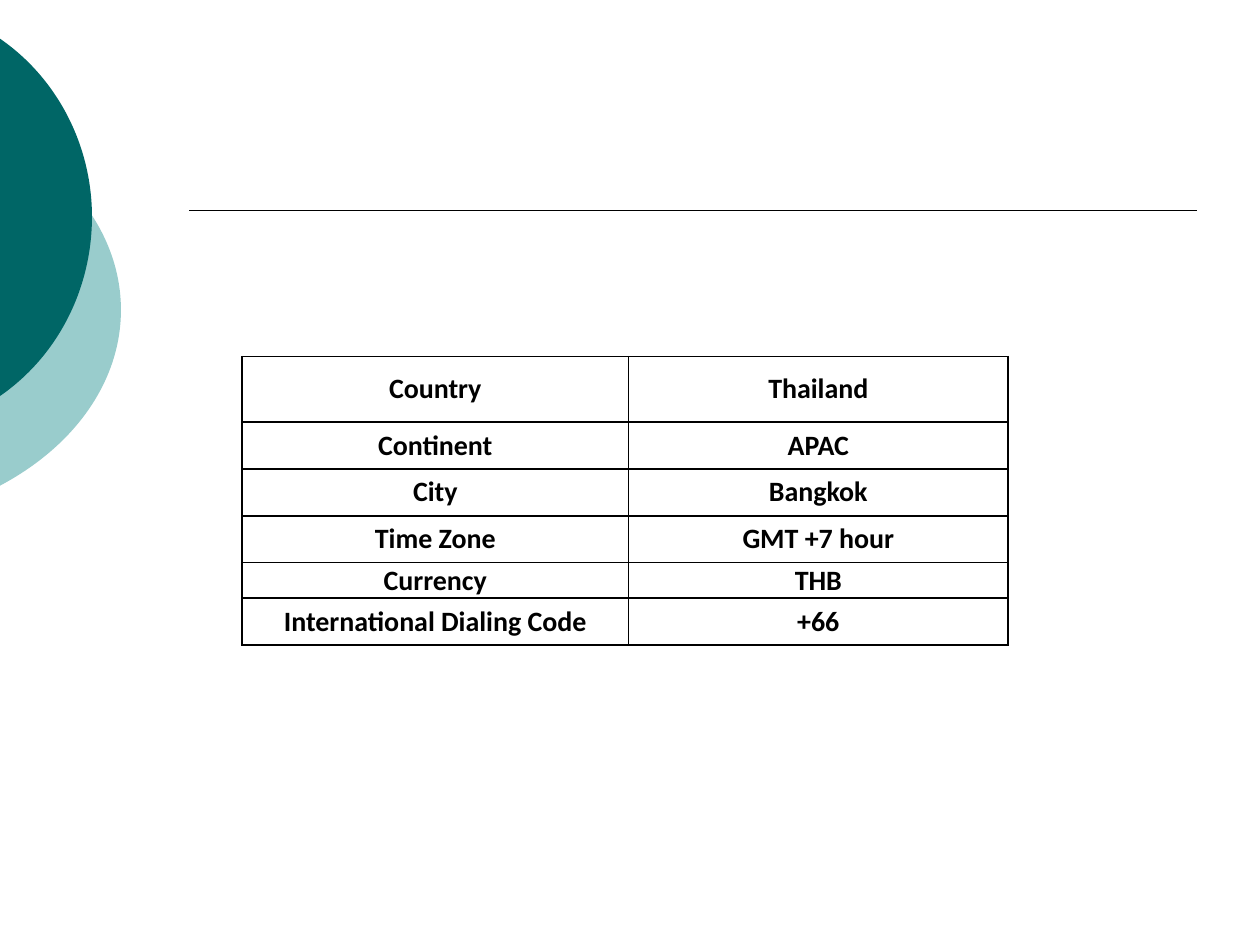
from lxml.etree import SubElement
from pptx import Presentation
from pptx.dml.color import RGBColor
from pptx.enum.shapes import MSO_CONNECTOR
from pptx.enum.text import MSO_ANCHOR, PP_ALIGN
from pptx.oxml.ns import qn
from pptx.util import Inches, Pt

COLORS = {"dark": "006666", "light": "99CCCC", "ink": "000000"}
FACTS = [
    ("Country", "Thailand"),
    ("Continent", "APAC"),
    ("City", "Bangkok"),
    ("Time Zone", "GMT +7 hour"),
    ("Currency", "THB"),
    ("International Dialing Code", "+66"),
]
COLUMN_WIDTHS = [3.07, 3.01]
ROW_HEIGHTS = [0.52, 0.37, 0.37, 0.37, 0.28, 0.37]
TIGHT_ROW = 4
EDGE = -0.01


def color(name):
    return RGBColor.from_string(COLORS[name])


def add_edge_disc(slide, left, top, width, height, curves, fill):
    right, bottom = left + width, top + height
    corners = [(left, top), (right, top), (right, bottom), (left, bottom)]
    builder = slide.shapes.build_freeform(Inches(left), Inches(top))
    builder.add_line_segments([(Inches(x), Inches(y)) for x, y in corners[1:]])
    shape = builder.convert_to_shape()
    outline = next(shape._element.iter(qn("a:path")))
    for command in list(outline):
        outline.remove(command)

    def add_command(name, points):
        command = SubElement(outline, qn(f"a:{name}"))
        for x, y in points:
            SubElement(command, qn("a:pt"), x=str(Inches(x - left)), y=str(Inches(y - top)))

    add_command("moveTo", curves[:1])
    add_command("cubicBezTo", curves[1:4])
    add_command("cubicBezTo", curves[4:])
    SubElement(outline, qn("a:close"))
    shape.shadow.inherit = False
    shape.fill.solid()
    shape.fill.fore_color.rgb = color(fill)
    shape.line.fill.background()


def add_rule(slide, left, right, y):
    rule = slide.shapes.add_connector(
        MSO_CONNECTOR.STRAIGHT, Inches(left), Inches(y), Inches(right), Inches(y))
    rule.line.color.rgb = color("ink")
    rule.line.width = Pt(1)
    SubElement(rule._element.spPr, qn("a:effectLst"))


def add_borders(cell):
    properties = cell._tc.get_or_add_tcPr()
    for index, side in enumerate(("lnL", "lnR", "lnT", "lnB")):
        border = properties.makeelement(qn(f"a:{side}"), {"w": str(Pt(1))})
        fill = SubElement(border, qn("a:solidFill"))
        SubElement(fill, qn("a:srgbClr"), val=COLORS["ink"])
        properties.insert(index, border)


def format_cell(cell, text):
    cell.text_frame.text = text
    cell.vertical_anchor = MSO_ANCHOR.MIDDLE
    cell.fill.background()
    add_borders(cell)
    paragraph = cell.text_frame.paragraphs[0]
    paragraph.alignment = PP_ALIGN.CENTER
    font = paragraph.runs[0].font
    font.name = "Calibri"
    font.size = Pt(16)
    font.bold = True
    font.color.rgb = color("ink")


def add_fact_table(slide, left, top):
    table = slide.shapes.add_table(
        len(FACTS), len(COLUMN_WIDTHS), Inches(left), Inches(top),
        Inches(sum(COLUMN_WIDTHS)), Inches(sum(ROW_HEIGHTS))).table
    table.first_row = False
    table.horz_banding = False
    for column, width in zip(table.columns, COLUMN_WIDTHS):
        column.width = Inches(width)
    for row, height, facts in zip(table.rows, ROW_HEIGHTS, FACTS):
        row.height = Inches(height)
        for cell, text in zip(row.cells, facts):
            format_cell(cell, text)
    for cell in table.rows[TIGHT_ROW].cells:
        cell.margin_left = cell.margin_right = cell.margin_top = Inches(0.01)
        cell.margin_bottom = 0


def main():
    presentation = Presentation()
    presentation.slide_width = Inches(10)
    presentation.slide_height = Inches(7.5)
    slide = presentation.slides.add_slide(presentation.slide_layouts[6])
    light_curves = [(EDGE, 1.06), (0.6, 1.38), (0.96, 1.9), (0.96, 2.46),
                    (0.96, 3.02), (0.6, 3.54), (EDGE, 3.86)]
    dark_curves = [(EDGE, 0.3), (0.46, 0.62), (0.73, 1.16), (0.73, 1.72),
                   (0.73, 2.29), (0.46, 2.83), (EDGE, 3.15)]
    add_edge_disc(slide, -3.54, 0.75, 4.5, 3.42, light_curves, "light")
    add_edge_disc(slide, -2.65, 0, 3.38, 3.45, dark_curves, "dark")
    add_rule(slide, 1.5, 9.5, 1.67)
    add_fact_table(slide, 1.92, 2.83)
    presentation.save("out.pptx")


if __name__ == "__main__":
    main()
